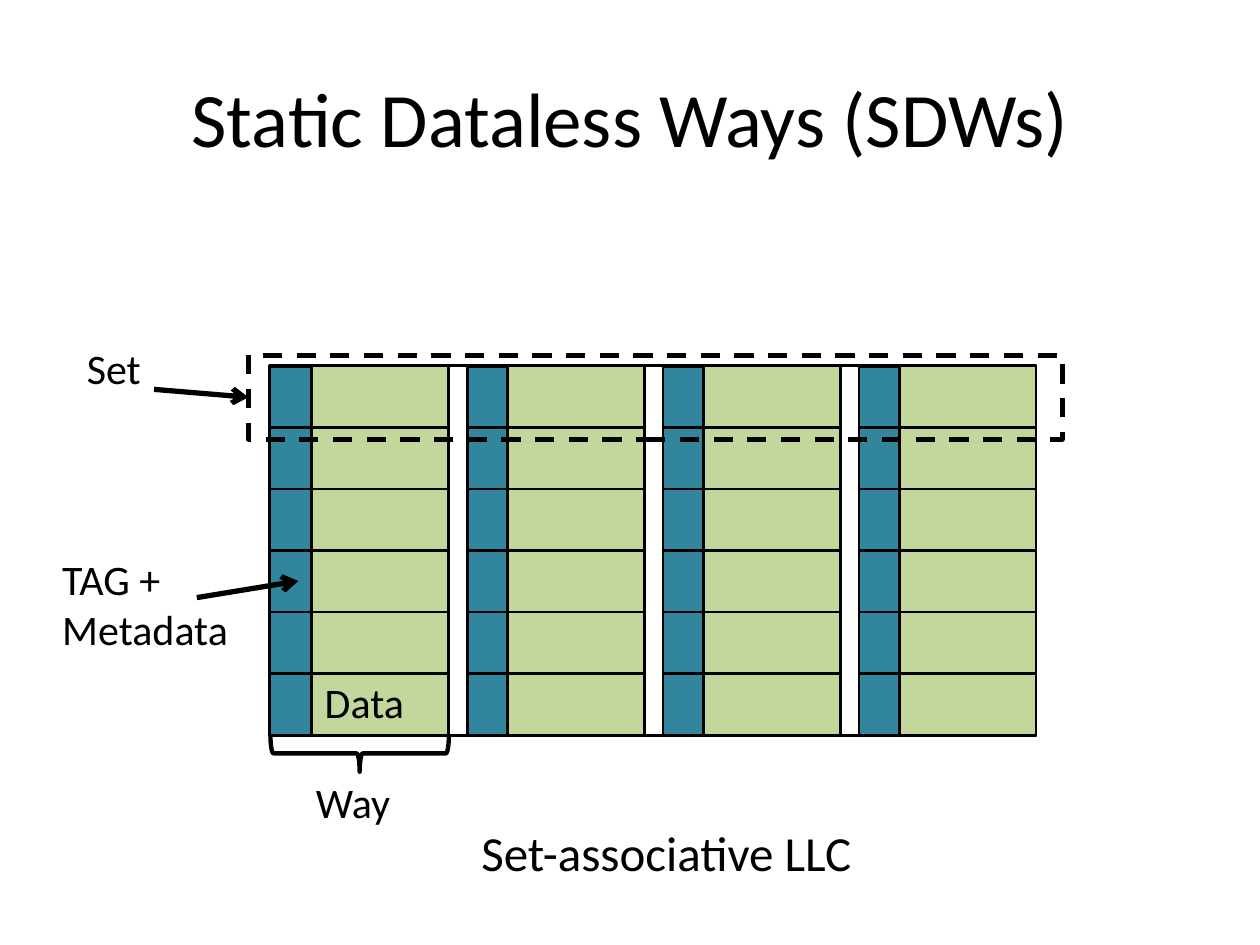
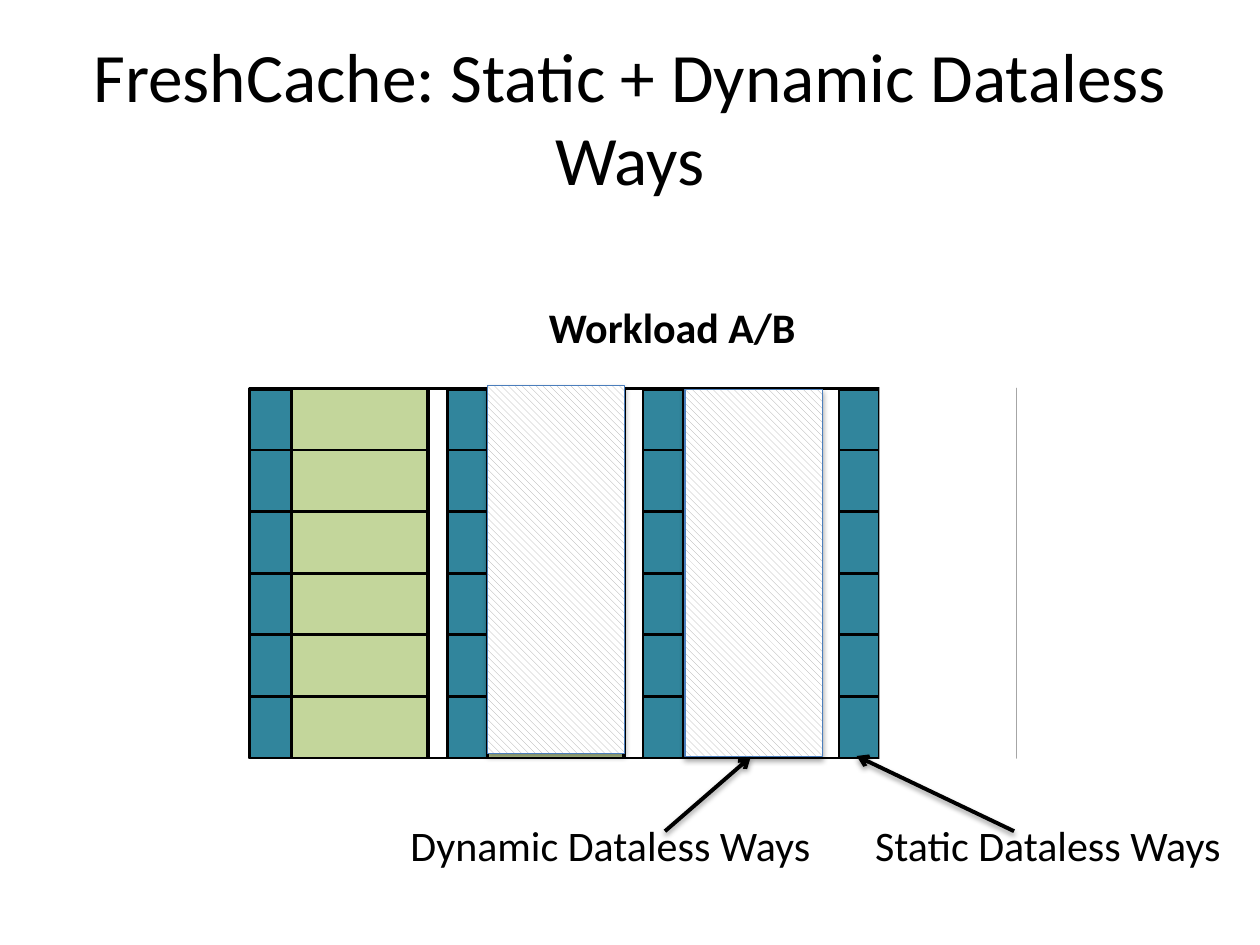
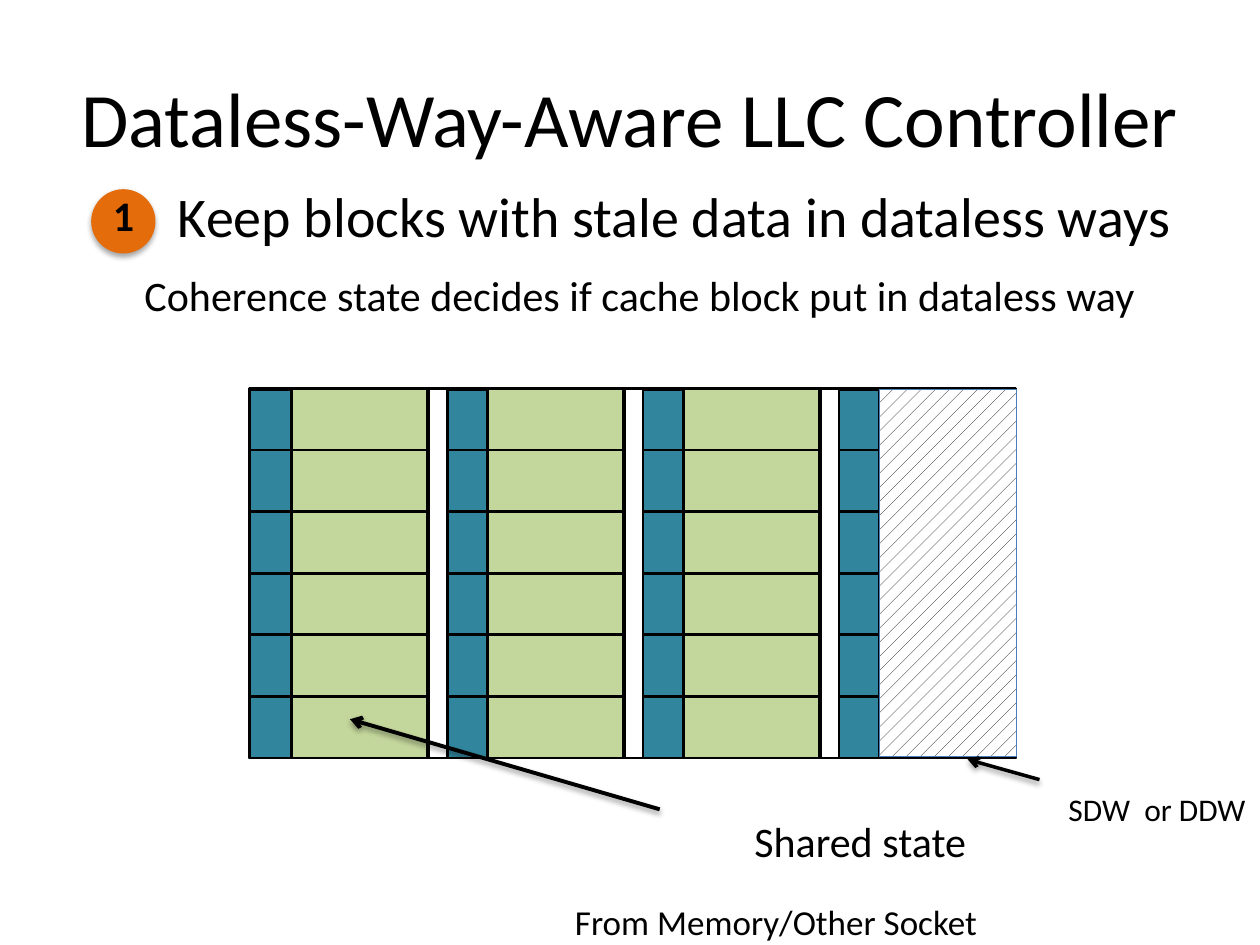
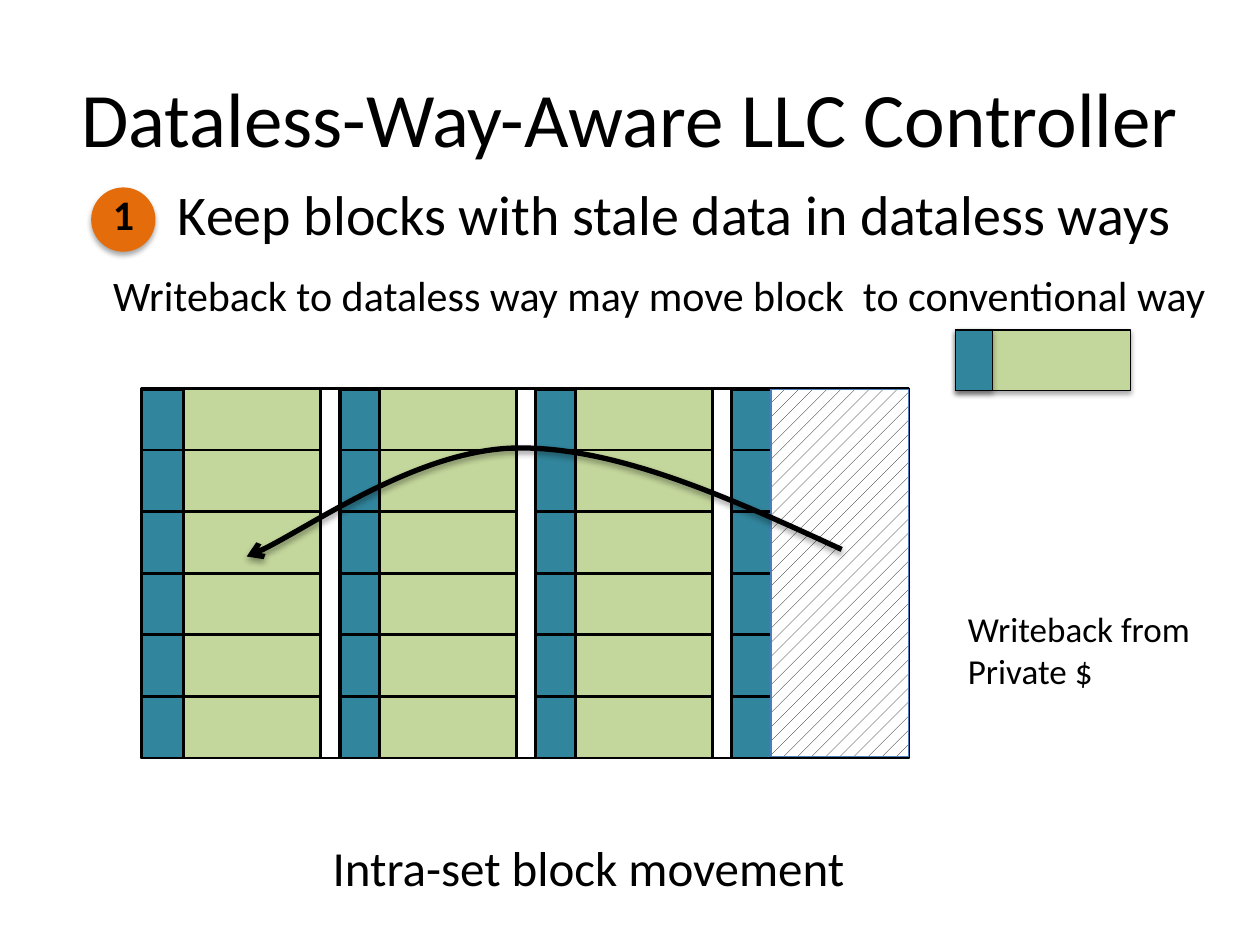
from pptx import Presentation
from pptx.dml.color import RGBColor
from pptx.enum.dml import MSO_LINE, MSO_PATTERN
from pptx.enum.shapes import MSO_CONNECTOR, MSO_SHAPE
from pptx.enum.text import MSO_ANCHOR, MSO_AUTO_SIZE
from pptx.oxml import parse_xml
from pptx.oxml.ns import nsdecls, qn
from pptx.util import Pt

COLORS = {
    "ink": "000000",
    "paper": "FFFFFF",
    "data": "C3D69B",
    "tag": "31859C",
    "badge": "E46C0A",
    "edge": "4B7EBC",
    "gray": "A6A6A6",
}
FONT = "Calibri"
TITLE_BOX = (36, 21.5, 648, 90)
PITCH, DATA_WIDE, GAP_WIDE = 112, 78, 10.5
TAG_WIDES = (24, 22.5, 24.5, 26)
ROWS, ROW_HIGH, ROW_WIDE = 6, 35.2, 438
DOWN = (MSO_PATTERN.WIDE_DOWNWARD_DIAGONAL, "gray")
DOTS = (MSO_PATTERN.PERCENT_10, "ink")
RECT = MSO_SHAPE.RECTANGLE
TOPIC = "Dataless-Way-Aware LLC Controller"
POINT = "Keep blocks with stale data in dataless ways"

SLIDES = [
    {
        "title": "Static Dataless Ways (SDWs)",
        "cache": (154, 209),
        "parts": [
            ("note", "TAG + \vMetadata", (28.5, 312.5, 177, 65.5)),
            ("note", "Data", (178.5, 383, 114, 36)),
            ("arrow", (112.5, 341.5), (170.5, 332), {"wide": 3}),
            ("note", "Set", (42.5, 192, 140.5, 36)),
            ("arrow", (88, 222.5), (142, 227), {"wide": 3}),
            ("block", (195, 379.5, 21, 102),
             {"kind": MSO_SHAPE.RIGHT_BRACE, "wide": 2.5, "turn": 90}),
            ("note", "Way", (173.5, 440, 114, 36)),
            ("note", "Set-associative LLC", (268, 466.5, 290, 41), {"size": 28}),
            ("block", (142, 203, 465, 48), {"wide": 2.75, "dash": True}),
        ],
    },
    {
        "title": "FreshCache: Static + Dynamic Dataless Ways",
        "size": 39.6,
        "cache": (142.5, 222),
        "parts": [
            ("note", "Workload A/B", (306.5, 168.5, 187, 36), {"bold": True}),
            ("block", (502.5, 220.5, 78.5, 232), {"fill": "paper", "line": None}),
            ("hatch", (391.5, 222.5), DOWN, {"shade": 35}),
            ("note", "Static Dataless Ways", (493, 464.5, 237.5, 36)),
            ("note", "Dynamic Dataless Ways", (227.5, 464.5, 283, 36)),
            ("arrow", (579.5, 475), (489.5, 432), {"shade": 38}),
            ("arrow", (380, 475), (429, 432.5), {"shade": 38}),
            ("hatch", (278.5, 220.5), DOWN, {"shade": 35}),
        ],
    },
    {
        "title": TOPIC,
        "point": 100,
        "cache": (142.5, 222),
        "parts": [
            ("note", "Coherence state decides if cache block put in dataless way",
             (75.5, 150.5, 607, 36)),
            ("note", "From Memory/Other Socket", (321.5, 511, 272, 31.5), {"size": 20}),
            ("hatch", (502.5, 222.5), DOTS),
            ("arrow", (594, 445.5), (553, 434), {"wide": 2, "shade": 38}),
            ("note", "Shared state", (424, 462.5, 180, 36)),
            ("arrow", (377, 462.5), (200, 411), {"shade": 38}),
            ("note", "SDW  or DDW", (603.5, 448, 144.5, 29), {"size": 18}),
        ],
    },
    {
        "title": TOPIC,
        "point": 99,
        "cache": (81, 222),
        "parts": [
            ("note", "Writeback to dataless way may move block  to conventional way",
             (57.5, 150.5, 647, 36)),
            ("note", "Intra-set block movement", (183, 475, 332, 41), {"size": 28}),
            ("hatch", (440.5, 222.5), DOTS),
            ("curve", [(481, 314), (417, 284.5), (353, 255.5), (296, 256),
                       (240, 256.5), (163.5, 310.5), (141, 318)]),
            ("block", (546, 188.5, 100, 34.5), {"fill": "data", "wide": 0.75, "shade": 35}),
            ("note", "Writeback from Private $", (546, 343.5, 167, 55.5), {"size": 20}),
            ("block", (546, 188.5, 21, 34.5), {"fill": "tag", "wide": 0.75, "shade": 35}),
        ],
    },
]


def color(name):
    return RGBColor.from_string(COLORS[name])


def apply(item, values):
    for key, value in values.items():
        setattr(item, key, value)


def place(shape, box):
    apply(shape, dict(zip(("left", "top", "width", "height"), map(Pt, box))))


def write(frame, text, size, bold=False):
    frame.text = text
    for run in frame.paragraphs[0].runs:
        apply(run.font, {"name": FONT, "size": Pt(size), "bold": bold})
        run.font.color.rgb = color("ink")


def shadow(shape, shade):
    inner = ""
    if shade:
        inner = (
            '<a:outerShdw blurRad="40000" dist="23000" dir="5400000" rotWithShape="0">'
            f'<a:srgbClr val="{COLORS["ink"]}"><a:alpha val="{shade * 1000}"/></a:srgbClr>'
            "</a:outerShdw>"
        )
    xml = f'<a:effectLst {nsdecls("a")}>{inner}</a:effectLst>'
    shape.element.spPr.append(parse_xml(xml))


def stroke(shape, name, wide):
    shape.line.color.rgb = color(name)
    shape.line.width = Pt(wide)


def tip(shape):
    line = shape.element.spPr.find(qn("a:ln"))
    line.append(parse_xml(f'<a:tailEnd {nsdecls("a")} type="arrow"/>'))


def block(home, box, kind=RECT, fill=None, line="ink", wide=1.5, dash=False, turn=0, shade=0):
    shape = home.add_shape(kind, *map(Pt, box))
    shape.rotation = turn
    if fill:
        shape.fill.solid()
        shape.fill.fore_color.rgb = color(fill)
    else:
        shape.fill.background()
    if line:
        stroke(shape, line, wide)
    else:
        shape.line.fill.background()
    if dash:
        shape.line.dash_style = MSO_LINE.DASH
    shadow(shape, shade)
    return shape


def hatch(home, spot, style, shade=0):
    shape = block(home, (*spot, 78.5, 210), line="edge", wide=0.75, shade=shade)
    shape.fill.patterned()
    shape.fill.pattern = style[0]
    shape.fill.fore_color.rgb = color(style[1])
    shape.fill.back_color.rgb = color("paper")


def note(home, text, box, size=24, bold=False):
    frame = home.add_textbox(*map(Pt, box)).text_frame
    apply(frame, {"word_wrap": True, "auto_size": MSO_AUTO_SIZE.SHAPE_TO_FIT_TEXT})
    write(frame, text, size, bold)


def arrow(home, start, end, wide=2.25, shade=0):
    shape = home.add_connector(MSO_CONNECTOR.STRAIGHT, *map(Pt, start + end))
    stroke(shape, "ink", wide)
    tip(shape)
    shadow(shape, shade)


def curve(home, points):
    spots = [(Pt(x), Pt(y)) for x, y in points]
    pen = home.build_freeform(*spots[0])
    pen.add_line_segments(spots[1:], close=False)
    shape = pen.convert_to_shape()
    trail = next(shape.element.iter(qn("a:path")))
    steps = trail.findall(qn("a:lnTo"))
    for first in range(0, len(steps), 3):
        bend = parse_xml(f'<a:cubicBezTo {nsdecls("a")}/>')
        for step in steps[first:first + 3]:
            bend.append(step[0])
            trail.remove(step)
        trail.append(bend)
    shape.fill.background()
    stroke(shape, "ink", 3)
    tip(shape)
    shadow(shape, 38)


def cache(home, left, top):
    high = ROWS * ROW_HIGH
    starts = [left + TAG_WIDES[0] + PITCH * i for i in range(len(TAG_WIDES))]
    for x in starts:
        block(home, (x, top, DATA_WIDE, high), fill="data")
    for x, wide in zip(starts, TAG_WIDES):
        block(home, (x - wide, top + 0.5, wide, high - 0.5), fill="tag")
    for row in range(ROWS):
        block(home, (left, top + row * ROW_HIGH, ROW_WIDE, ROW_HIGH))
    for x in starts[:-1]:
        block(home, (x + DATA_WIDE + 0.5, top, GAP_WIDE, high), fill="paper")


def point(slide, top):
    body = slide.placeholders[1]
    place(body, (67.5, top, 617, 46))
    apply(body.text_frame, {
        "word_wrap": False,
        "auto_size": MSO_AUTO_SIZE.SHAPE_TO_FIT_TEXT,
        "vertical_anchor": MSO_ANCHOR.TOP,
    })
    write(body.text_frame, POINT, 32)
    home = slide.shapes.add_group_shape().shapes
    block(home, (52.5, top + 8.5, 36, 36), kind=MSO_SHAPE.OVAL,
          fill="badge", line="badge", wide=0.75, shade=35)
    note(home, "1", (57.5, top + 5, 56, 36), bold=True)


DRAW = {"block": block, "hatch": hatch, "note": note, "arrow": arrow, "curve": curve}


def build(deck, page):
    layout = deck.slide_layouts[1 if "point" in page else 5]
    slide = deck.slides.add_slide(layout)
    title = slide.shapes.title
    place(title, TITLE_BOX)
    title.text_frame.vertical_anchor = MSO_ANCHOR.MIDDLE
    write(title.text_frame, page["title"], page.get("size", 44))
    if "point" in page:
        point(slide, page["point"])
    cache(slide.shapes, *page["cache"])
    for kind, *values in page["parts"]:
        style = values.pop() if isinstance(values[-1], dict) else {}
        DRAW[kind](slide.shapes, *values, **style)


def main():
    deck = Presentation()
    apply(deck, {"slide_width": Pt(720), "slide_height": Pt(540)})
    for page in SLIDES:
        build(deck, page)
    deck.save("out.pptx")


if __name__ == "__main__":
    main()
